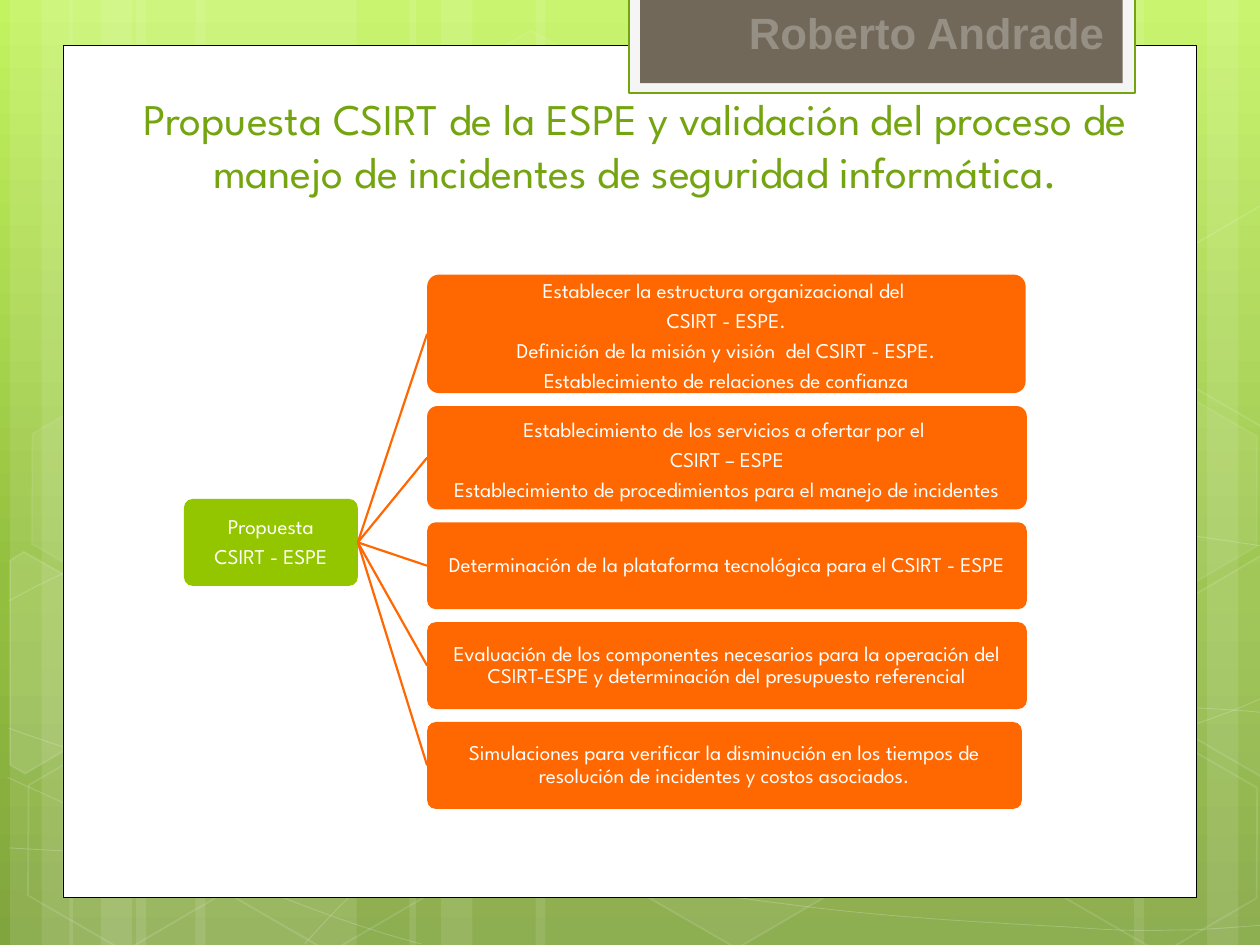
import copy
import lxml.etree
import pptx
import pptx.util
import pptx.dml.color
import pptx.enum.shapes
import pptx.enum.text
import pptx.oxml.ns

RGBColor = pptx.dml.color.RGBColor
WHITE = RGBColor(0xFF, 0xFF, 0xFF)
BLACK = RGBColor(0, 0, 0)
PALE = RGBColor(0xF5, 0xF5, 0xF5)
BROWN = RGBColor(0x71, 0x68, 0x5A)
GREEN = RGBColor(0x74, 0xA5, 0x10)
LIME = RGBColor(0x94, 0xC6, 0x00)
ORANGE = RGBColor(0xFF, 0x67, 0x00)
SKY = [(0, RGBColor(0xC3, 0xF3, 0x5F)), (0.62, RGBColor(0x93, 0xBF, 0x3F)),
       (1, RGBColor(0x81, 0xA5, 0x3E))]

COLS, ROWS = 10, 7.5
CELL = pptx.util.Inches(1)
FONT = "League Spartan"
KIND = pptx.enum.shapes.MSO_SHAPE
ALIGN = pptx.enum.text.PP_ALIGN
ANCHOR = pptx.enum.text.MSO_ANCHOR
qn = pptx.oxml.ns.qn

BARS = [(1.08, 1.75), (0.08, 0.5), (0.33, 0.83), (1.55, 1.75), (0.55, 0.5), (0.8, 0.83),
        (7.33, 1.75), (9.58, 0.5), (9, 0.83), (4.25, 3.08), (3.25, 0.5), (3.5, 0.83)]
WAVES = [
    [(0.07, 6.73), (0.61, 6.76), (1.15, 6.79), (1.9, 6.78), (2.65, 6.77), (3.58, 6.75),
     (4.58, 6.65), (5.58, 6.55), (7, 6.36), (7.92, 6.17), (8.83, 5.98), (9.77, 5.68),
     (10.07, 5.51)],
    [(0.07, 4.77), (0.36, 4.61), (0.65, 4.46), (1.21, 4.31), (1.78, 4.16), (2.59, 3.94),
     (3.47, 3.87), (4.36, 3.8), (5.44, 3.79), (6.54, 3.87), (7.64, 3.95), (9.47, 4.26),
     (10.07, 4.34)],
    [(0.06, 6.17), (1.27, 6.72), (2.47, 7.27), (3.34, 7.49)],
    [(0.07, 5.78), (0.38, 5.89), (0.7, 6), (1.28, 6.16), (1.86, 6.31), (2.73, 6.56),
     (3.57, 6.73), (4.4, 6.9), (5.45, 7.08), (6.28, 7.18), (7.11, 7.29), (8, 7.33),
     (8.53, 7.36), (9.05, 7.4), (9.19, 7.38), (9.45, 7.38), (9.71, 7.37), (9.89, 7.35),
     (10.07, 7.34)],
    [(2.42, 7.49), (2.6, 7.29), (2.78, 7.09), (3.02, 6.91), (3.26, 6.73), (3.6, 6.53),
     (3.88, 6.39), (4.16, 6.25), (4.33, 6.19), (4.7, 6.09), (5.06, 5.99), (5.73, 5.85),
     (6.08, 5.78), (6.44, 5.71), (6.49, 5.71), (6.8, 5.69), (7.11, 5.66), (7.6, 5.63),
     (7.94, 5.62), (8.29, 5.61), (8.86, 5.62), (8.86, 5.62), (9.08, 5.62), (9.3, 5.62),
     (9.53, 5.62), (9.71, 5.63), (9.88, 5.64), (10.06, 5.66)],
]
HEXES = [(3.34, 0.36, 0.04, 0.08), (4.97, 5.89, 0.06, 0.12), (0.11, 5.91, 0, 0.12),
         (0.14, 3.12, 0.07, 0.08), (1.74, 5.92, 0, 0.12), (7.53, 4.53, 0.1, 0.12),
         (8.34, 5.93, 0, 0.12), (8.34, 3.14, 0.07, 0.08)]
SHARDS = [
    ([(0.08, 4.45), (0.19, 4.38), (0.96, 4.82), (0.95, 5.7), (0.2, 6.14), (0.08, 6.07)], 0.1),
    ([(9.26, 4.85), (10.01, 4.41), (10.09, 4.46), (10.09, 6.13), (10.02, 6.17),
      (9.26, 5.73)], 0.04),
    ([(9.26, 2.07), (10.01, 1.63), (10.1, 1.68), (10.09, 3.35), (10.02, 3.39),
      (9.26, 2.95)], 0),
]

TITLE = ("Propuesta CSIRT de la ESPE y validación del proceso de manejo de incidentes "
         "de seguridad informática.")
ROOT = "Propuesta\nCSIRT - ESPE"
STEPS = [
    (4.75, 0.94, 0.05, "Establecer la estructura organizacional del \nCSIRT - ESPE.\n"
     "Definición de la misión y visión  del CSIRT - ESPE.\n"
     "Establecimiento de relaciones de confianza"),
    (4.76, 0.82, 0.04, "Establecimiento de los servicios a ofertar por el \nCSIRT – ESPE\n"
     "Establecimiento de procedimientos para el manejo de incidentes"),
    (4.76, 0.69, 0, "Determinación de la plataforma tecnológica para el CSIRT - ESPE"),
    (4.76, 0.69, 0, "Evaluación de los componentes necesarios para la operación del "
     "CSIRT-ESPE y determinación del presupuesto referencial"),
    (4.72, 0.69, 0, "Simulaciones para verificar la disminución en los tiempos de "
     "resolución de incidentes y costos asociados."),
]
BASE = 6.42


def span(*cells):
    return [round(n * CELL) for n in cells]


def fade(node, share):
    for tint in node.iter(qn("a:srgbClr")):
        lxml.etree.SubElement(tint, qn("a:alpha"), val=str(round(share * 100000)))


def paint(shape, fill=None, line=None, width=1, clear=1, faint=1):
    shape.shadow.inherit = False
    props = shape.element.spPr
    if fill is None or clear == 0:
        shape.fill.background()
    else:
        shape.fill.solid()
        shape.fill.fore_color.rgb = fill
        if clear < 1:
            fade(props.find(qn("a:solidFill")), clear)
    if line is None:
        shape.line.fill.background()
    else:
        shape.line.color.rgb = line
        shape.line.width = pptx.util.Pt(width)
        if faint < 1:
            fade(props.find(qn("a:ln")), faint)


def block(slide, kind, area, **look):
    shape = slide.shapes.add_shape(kind, *span(*area))
    paint(shape, **look)
    return shape


def outline(slide, dots, close, **look):
    spots = [span(*dot) for dot in dots]
    pen = slide.shapes.build_freeform(*spots[0], scale=1)
    pen.add_line_segments(spots[1:], close=close)
    shape = pen.convert_to_shape()
    paint(shape, **look)
    return shape


def bend(shape):
    legs = list(shape.element.iter(qn("a:lnTo")))
    for i in range(0, len(legs), 3):
        arc = lxml.etree.Element(qn("a:cubicBezTo"))
        legs[i].addprevious(arc)
        for leg in legs[i:i + 3]:
            arc.append(leg[0])
            leg.getparent().remove(leg)


def write(shape, text, size, color, align, font=FONT, bold=False):
    frame = shape.text_frame
    frame.word_wrap = True
    frame.text = text
    for para in frame.paragraphs:
        para.alignment = align
        for run in para.runs:
            run.font.name = font
            run.font.size = pptx.util.Pt(size)
            run.font.bold = bold
            run.font.color.rgb = color
    return frame


def node(slide, area, fill, text, drop=0):
    shape = block(slide, KIND.ROUNDED_RECTANGLE, area, fill=fill)
    shape.adjustments[0] = 0.1
    frame = write(shape, text, 12, WHITE, ALIGN.CENTER)
    frame.vertical_anchor = ANCHOR.MIDDLE
    frame.margin_left = frame.margin_right = frame.margin_bottom = pptx.util.Inches(0.03)
    frame.margin_top = pptx.util.Inches(0.03 + drop)
    for para in frame.paragraphs:
        para.line_spacing = 0.9
    for para in frame.paragraphs[:-1]:
        para.space_after = pptx.util.Pt(4.2)
    return shape


def link(slide, start, end):
    line = slide.shapes.add_connector(pptx.enum.shapes.MSO_CONNECTOR.STRAIGHT, 0, 0, 0, 0)
    line.begin_connect(start, 3)
    line.end_connect(end, 1)
    line.line.color.rgb = ORANGE
    line.line.width = pptx.util.Pt(1.25)
    lxml.etree.SubElement(line.element.spPr, qn("a:effectLst"))


def backdrop(slide):
    fill = slide.background.fill
    fill.gradient()
    fill.gradient_angle = 270
    first = slide.element.find(".//" + qn("a:gs"))
    first.addnext(copy.deepcopy(first))
    for stop, (place, color) in zip(fill.gradient_stops, SKY):
        stop.position = place
        stop.color.rgb = color
    for left, width in BARS:
        block(slide, KIND.RECTANGLE, (left, 0, width, ROWS), fill=WHITE, clear=0.1)
    for knots in WAVES:
        bend(outline(slide, knots, False, line=WHITE, width=0.5, faint=0.2))
    for left, top, clear, faint in HEXES:
        shape = block(slide, KIND.HEXAGON, (left, top, 1.75, 1.52),
                      fill=WHITE, line=WHITE, clear=clear, faint=faint)
        shape.rotation = 30
        shape.adjustments[0] = 0.285
    for dots, clear in SHARDS:
        outline(slide, dots, True, fill=WHITE, line=WHITE, clear=clear, faint=0.12)
    block(slide, KIND.RECTANGLE, (0.5, 0.36, 9, 6.76), fill=WHITE, line=BLACK, width=0.5)


def badge(slide):
    block(slide, KIND.RECTANGLE, (4.99, -0.02, 4.02, 0.76), fill=PALE, line=GREEN, width=1.25)
    block(slide, KIND.RECTANGLE, (5.08, -0.02, 3.83, 0.68), fill=BROWN)
    label = slide.shapes.add_textbox(*span(5.16, 0, 3.7, 0.52))
    write(label, "Roberto Andrade", 25, WHITE, ALIGN.RIGHT, "Arial", True)
    fade(label.element.txBody, 0.25)


def heading(slide):
    title = slide.shapes.title
    title.element.getparent().append(title.element)
    title.left, title.top, title.width, title.height = span(0.75, 0.68, 8.58, 1.36)
    frame = write(title, TITLE, 25, GREEN, ALIGN.CENTER)
    frame.vertical_anchor = ANCHOR.TOP
    frame.auto_size = pptx.enum.text.MSO_AUTO_SIZE.NONE


def tree(slide):
    root = node(slide, (1.46, 3.96, 1.38, 0.69), LIME, ROOT)
    top = 2.18
    gap = (BASE - top - sum(step[1] for step in STEPS)) / (len(STEPS) - 1)
    for width, height, drop, text in STEPS:
        step = node(slide, (3.39, top, width, height), ORANGE, text, drop)
        link(slide, root, step)
        top += height + gap


def main():
    deck = pptx.Presentation()
    deck.slide_width, deck.slide_height = span(COLS, ROWS)
    slide = deck.slides.add_slide(deck.slide_layouts[5])
    backdrop(slide)
    badge(slide)
    heading(slide)
    tree(slide)
    deck.save("out.pptx")


if __name__ == "__main__":
    main()
